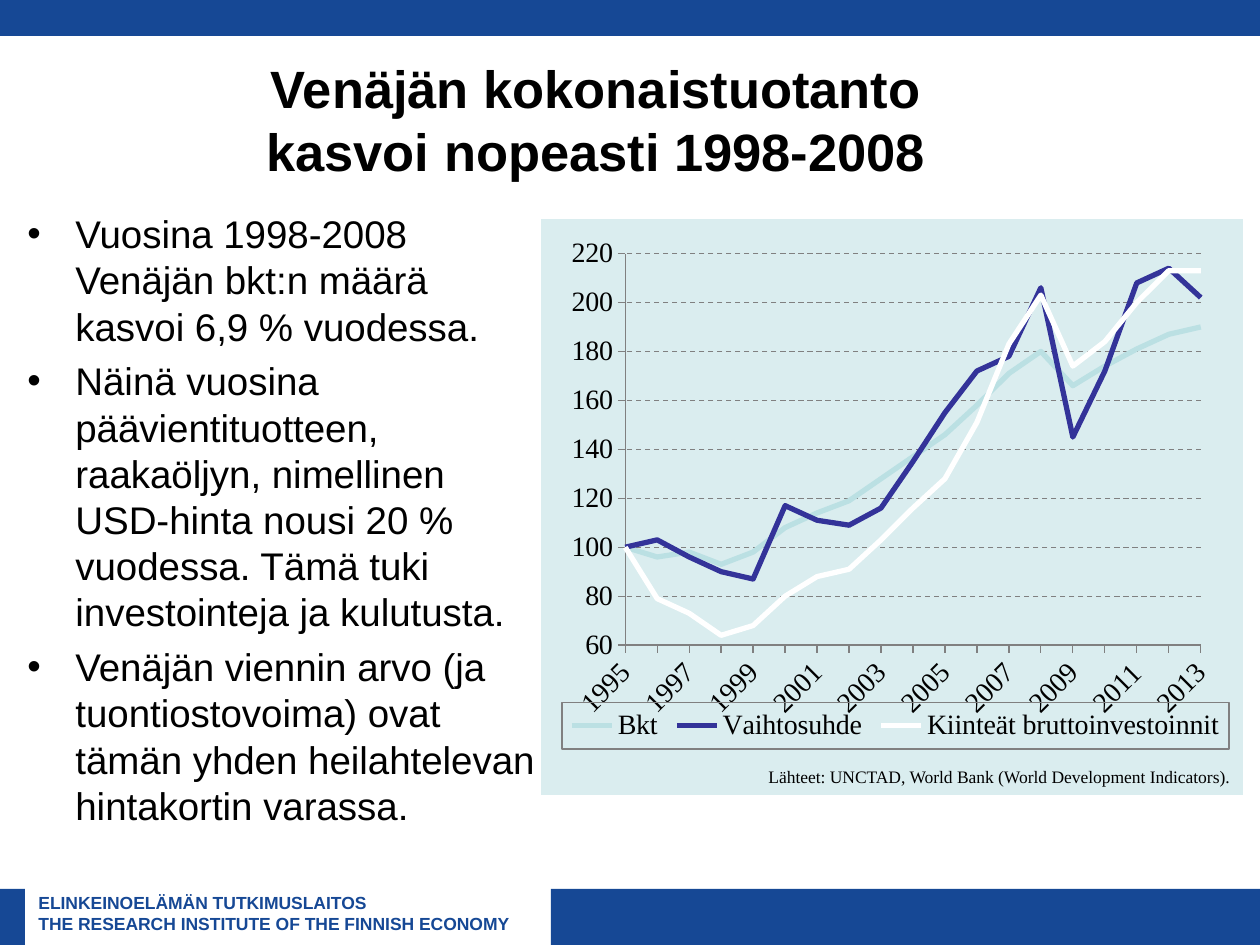
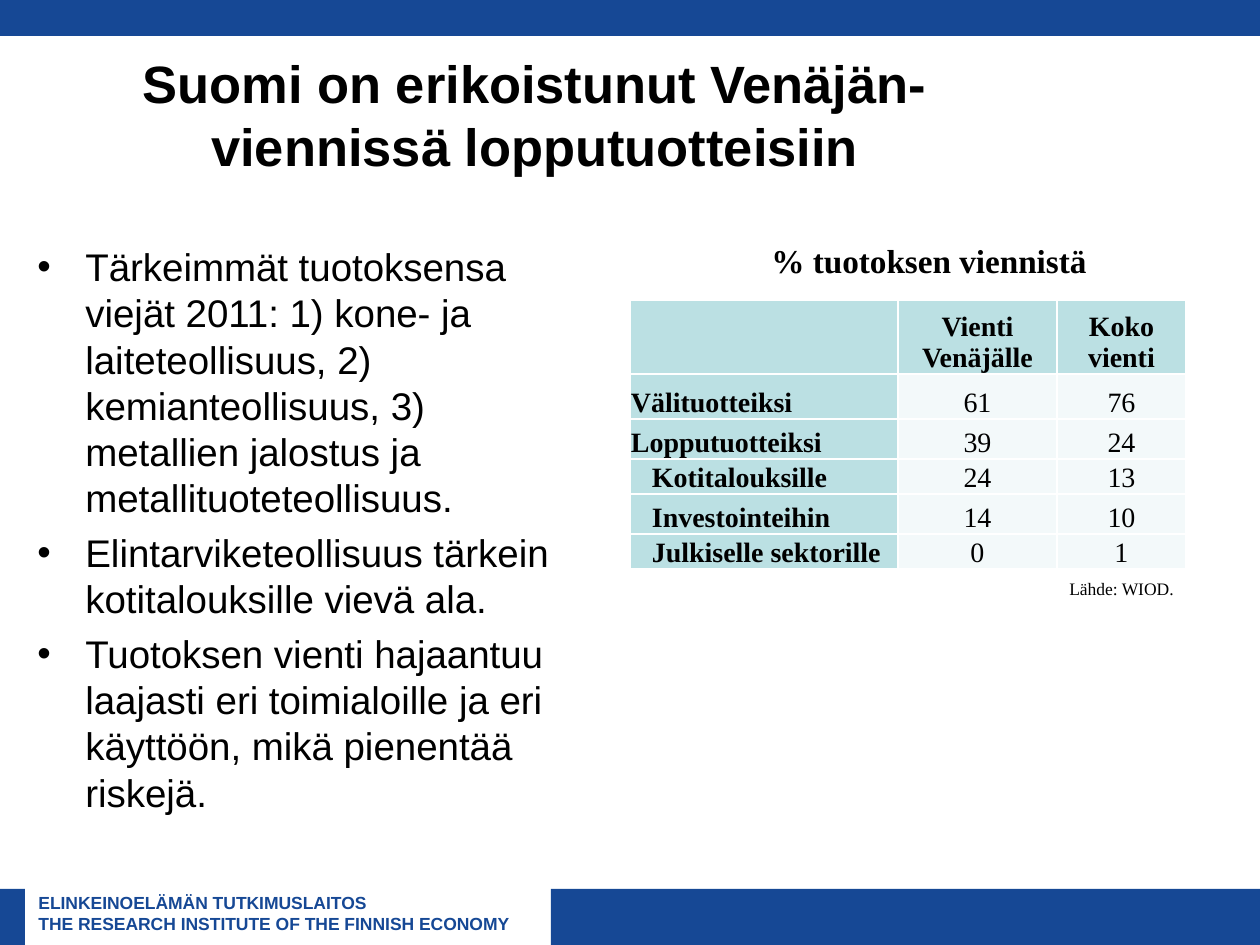
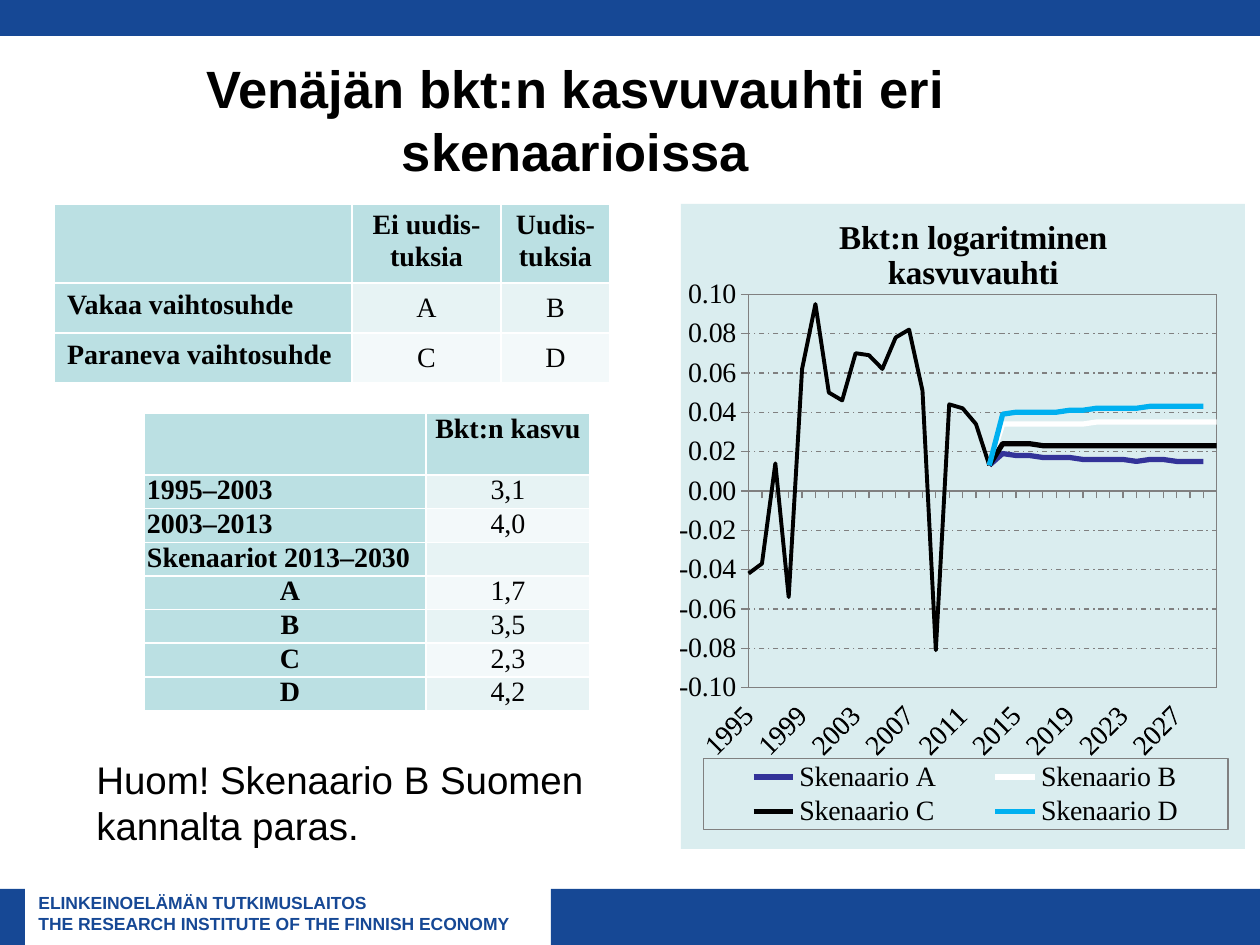
from lxml.etree import SubElement
from pptx import Presentation
from pptx.chart.data import CategoryChartData
from pptx.dml.color import RGBColor
from pptx.enum.chart import XL_CHART_TYPE, XL_LEGEND_POSITION, XL_TICK_LABEL_POSITION, XL_TICK_MARK
from pptx.enum.dml import MSO_LINE
from pptx.enum.shapes import MSO_SHAPE
from pptx.enum.text import MSO_ANCHOR, PP_ALIGN
from pptx.oxml import parse_xml
from pptx.oxml.ns import nsdecls, qn
from pptx.util import Emu, Pt

PX = 914400 / 126
SANS, SERIF = "Arial", "Times New Roman"
BLUE, BLACK, WHITE, GREY = "164895", "000000", "FFFFFF", "808080"
TEAL, PALE, NAVY, SKY = "BBE0E3", "DAEDEF", "333399", "00B0F0"
BAND, LIGHT = "E7F3F4", "F3F9FA"
LEFT, MID = PP_ALIGN.LEFT, PP_ALIGN.CENTER
TOP, CENTRE, BOTTOM = MSO_ANCHOR.TOP, MSO_ANCHOR.MIDDLE, MSO_ANCHOR.BOTTOM

BARS = [(551, 889, 709, 56), (0, 0, 1260, 36), (0, 889, 25, 56)]
FOOTER = ["ELINKEINOELÄMÄN TUTKIMUSLAITOS",
          "THE RESEARCH INSTITUTE OF THE FINNISH ECONOMY"]

GROWTH = [
    "Vuosina 1998-2008 Venäjän bkt:n määrä kasvoi 6,9 % vuodessa.",
    "Näinä vuosina päävientituotteen, raakaöljyn, nimellinen USD-hinta nousi 20 % vuodessa. "
    "Tämä tuki investointeja ja kulutusta.",
    "Venäjän viennin arvo (ja tuontiostovoima) ovat tämän yhden heilahtelevan "
    "hintakortin varassa.",
]
EXPORTS = [
    "Tärkeimmät tuotoksensa viejät 2011: 1) kone- ja laiteteollisuus, 2) kemianteollisuus, "
    "3) metallien jalostus ja metallituoteteollisuus.",
    "Elintarviketeollisuus tärkein kotitalouksille vievä ala.",
    "Tuotoksen vienti hajaantuu laajasti eri toimialoille ja eri käyttöön, "
    "mikä pienentää riskejä.",
]

OUTPUT = {
    "box": (541, 219, 702, 576), "years": range(1995, 2014), "skip": 2,
    "scale": (60, 220, 20), "format": "0",
    "plot": (0.12, 0.06, 0.82, 0.68), "legend": (0.03, 0.84, 0.95, 0.08),
    "frame": PALE, "dash": MSO_LINE.DASH,
    "series": [
        ("Bkt", TEAL, 3, [100, 96, 98, 93, 98, 108, 114, 119, 128, 137, 146, 158, 171, 180,
                          166, 174, 181, 187, 190]),
        ("Vaihtosuhde", NAVY, 3, [100, 103, 96, 90, 87, 117, 111, 109, 116, 135, 155, 172,
                                  178, 206, 145, 172, 208, 214, 202]),
        ("Kiinteät bruttoinvestoinnit", WHITE, 3,
         [100, 79, 73, 64, 68, 80, 88, 91, 103, 116, 128, 151, 183, 203, 174, 184, 200,
          213, 213]),
    ],
}
PAST = [-0.042, -0.037, 0.014, -0.054, 0.062, 0.095, 0.05, 0.046, 0.07, 0.069, 0.062, 0.078,
        0.082, 0.051, -0.081, 0.044, 0.042, 0.034, 0.013]
GAP = [None] * (len(PAST) - 1)
PATHS = [
    ("Skenaario A", NAVY, [0.019, 0.018, 0.018] + [0.017] * 3 + [0.016] * 4
     + [0.015, 0.016, 0.016] + [0.015] * 3),
    ("Skenaario B", WHITE, [0.034] * 7 + [0.035] * 10),
    ("Skenaario C", BLACK, [0.024] * 3 + [0.023] * 14),
    ("Skenaario D", SKY, [0.039] + [0.04] * 4 + [0.041] * 2 + [0.042] * 4 + [0.043] * 5),
]
FUTURE = {
    "box": (679, 204, 566, 645), "years": range(1995, 2031), "skip": 4,
    "scale": (-0.1, 0.1, 0.02), "format": "0.00",
    "plot": (0.12, 0.14, 0.83, 0.61), "legend": (0.04, 0.86, 0.93, 0.11),
    "frame": GREY, "dash": MSO_LINE.DASH_DOT, "hide": 0,
    "title": "Bkt:n logaritminen kasvuvauhti",
    "series": [("Series 1", BLACK, 2.25, PAST)]
    + [(name, color, 3, GAP + PAST[-1:] + vals[:17]) for name, color, vals in PATHS],
}

# "sub": first indented row, indent in px, alignment
SHARES = {
    "at": (630, 300), "cols": [268, 159, 129], "rows": [74, 45, 40, 35, 40, 35],
    "pad": (1, 1, 1, 0), "anchors": (BOTTOM, BOTTOM), "fills": (LIGHT, LIGHT),
    "sub": (3, 21, LEFT),
    "cells": [("", "Vienti Venäjälle", "Koko vienti"), ("Välituotteiksi", "61", "76"),
              ("Lopputuotteiksi", "39", "24"), ("Kotitalouksille", "24", "13"),
              ("Investointeihin", "14", "10"), ("Julkiselle sektorille", "0", "1")],
}
CHOICES = {
    "at": (54, 204), "cols": [298, 149, 109], "rows": [78, 50, 50],
    "pad": (13, 6, 13, 6), "anchors": (TOP, CENTRE), "fills": (BAND, LIGHT),
    "sub": (3, 0, LEFT),
    "cells": [("", "Ei uudis-tuksia", "Uudis-tuksia"), ("Vakaa vaihtosuhde", "A", "B"),
              ("Paraneva vaihtosuhde", "C", "D")],
}
RATES = {
    "at": (144, 413), "cols": [282, 164], "rows": [62] + [31] * 7,
    "pad": (3, 0, 3, 0), "anchors": (TOP, TOP), "fills": (BAND, LIGHT),
    "sub": (4, 10, MID),
    "cells": [("", "Bkt:n kasvu"), ("1995–2003", "3,1"), ("2003–2013", "4,0"),
              ("Skenaariot 2013–2030", ""), ("A", "1,7"), ("B", "3,5"), ("C", "2,3"),
              ("D", "4,2")],
}


def px(n):
    return Emu(round(n * PX))


def rgb(code):
    return RGBColor.from_string(code)


def style(font, size, color=BLACK, bold=False, face=SERIF):
    font.name, font.size, font.bold = face, Pt(size), bold
    font.color.rgb = rgb(color)


def text(slide, box, lines, size, color=BLACK, bold=False, face=SANS,
         align=LEFT, anchor=TOP, bullet=False):
    frame = slide.shapes.add_textbox(*map(px, box)).text_frame
    frame.word_wrap, frame.vertical_anchor = True, anchor
    frame.text = "\n".join(lines)
    for i, par in enumerate(frame.paragraphs):
        par.alignment = align
        if face == SANS:
            par.line_spacing = Pt(size * 1.2)
        if bullet:
            par.space_before = Pt(5 if i else 0)
            props = par._p.get_or_add_pPr()
            props.set("marL", str(px(48)))
            props.set("indent", str(-px(48)))
            SubElement(props, qn("a:buFont"), typeface=SANS)
            SubElement(props, qn("a:buChar"), char="•")
        for run in par.runs:
            style(run.font, size, color, bold, face)


def start(deck, box, title):
    """Add a slide with the shared bands, footer and title."""
    slide = deck.slides.add_slide(deck.slide_layouts[6])
    for bar in BARS:
        shape = slide.shapes.add_shape(MSO_SHAPE.RECTANGLE, *map(px, bar))
        shape.shadow.inherit = False
        shape.fill.solid()
        shape.fill.fore_color.rgb = rgb(BLUE)
        shape.line.fill.background()
    text(slide, (26, 886, 525, 54), FOOTER, 10, BLUE, True)
    text(slide, box, [title], 30, bold=True, align=MID, anchor=CENTRE)
    return slide


def table(slide, spec):
    cols, rows = spec["cols"], spec["rows"]
    box = (*spec["at"], sum(cols), sum(rows))
    grid = slide.shapes.add_table(len(rows), len(cols), *map(px, box)).table
    for col, width in zip(grid.columns, cols):
        col.width = px(width)
    for row, height in zip(grid.rows, rows):
        row.height = px(height)
    first, indent, side = spec["sub"]
    for r, line in enumerate(spec["cells"]):
        for c, word in enumerate(line):
            cell, head = grid.cell(r, c), r == 0 or c == 0
            cell.fill.solid()
            cell.fill.fore_color.rgb = rgb(TEAL if head else spec["fills"][(r - 1) % 2])
            (cell.margin_left, cell.margin_top,
             cell.margin_right, cell.margin_bottom) = map(px, spec["pad"])
            cell.vertical_anchor = spec["anchors"][0 if head else 1]
            cell.text = word
            par = cell.text_frame.paragraphs[0]
            par.alignment = MID if r == 0 or c else LEFT
            if c == 0 and r >= first:
                par.alignment = side
                par._p.get_or_add_pPr().set("marL", str(px(indent)))
            for run in par.runs:
                style(run.font, 16, bold=head)
            if not word:
                SubElement(par._p, qn("a:endParaRPr"), sz="1600")


def place(node, index, spots, inner=False):
    """Give a chart part a fixed place, as shares of the chart."""
    old = node.find(qn("c:layout"))
    if old is not None:
        node.remove(old)
    layout = parse_xml(f"<c:layout {nsdecls('c')}><c:manualLayout/></c:layout>")
    if inner:
        SubElement(layout[0], qn("c:layoutTarget"), val="inner")
    for key in ("xMode", "yMode"):
        SubElement(layout[0], qn("c:" + key), val="edge")
    for key, spot in zip("xywh", spots):
        SubElement(layout[0], qn("c:" + key), val=str(spot))
    node.insert(index, layout)


def paint(fill=None, line=None):
    body = f'<a:solidFill><a:srgbClr val="{fill}"/></a:solidFill>' if fill else "<a:noFill/>"
    edge = f'<a:solidFill><a:srgbClr val="{line}"/></a:solidFill>' if line else "<a:noFill/>"
    return parse_xml(f'<c:spPr {nsdecls("c", "a")}>{body}<a:ln w="9525">{edge}</a:ln></c:spPr>')


def chart(slide, spec):
    data = CategoryChartData()
    data.categories = [str(year) for year in spec["years"]]
    for name, _, _, vals in spec["series"]:
        data.add_series(name, vals)
    graph = slide.shapes.add_chart(XL_CHART_TYPE.LINE, *map(px, spec["box"]), data).chart
    style(graph.font, 16)
    root = graph.element.find(qn("c:chart"))
    root.addnext(paint(PALE))
    area = root.find(qn("c:plotArea"))
    place(area, 0, spec["plot"], True)
    area.append(paint(line=spec["frame"]))

    graph.plots[0].vary_by_categories = False
    for line, (_, color, width, _) in zip(graph.plots[0].series, spec["series"]):
        line.smooth = False
        line.format.line.width = Pt(width)
        line.format.line.color.rgb = rgb(color)

    cats, vals = graph.category_axis, graph.value_axis
    for axis in (cats, vals):
        axis.major_tick_mark = XL_TICK_MARK.OUTSIDE
        axis.format.line.color.rgb = rgb(GREY)
        style(axis.tick_labels.font, 16)
    cats.tick_label_position = XL_TICK_LABEL_POSITION.LOW
    node = cats._element
    node.find(qn("c:txPr")).find(qn("a:bodyPr")).set("rot", "-2700000")
    last = node.find(qn("c:noMultiLvlLbl"))
    for key, step in (("tickLblSkip", spec["skip"]), ("tickMarkSkip", 1)):
        last.addprevious(parse_xml(f'<c:{key} {nsdecls("c")} val="{step}"/>'))
    vals.minimum_scale, vals.maximum_scale, vals.major_unit = spec["scale"]
    vals.tick_labels.number_format = spec["format"]
    vals.tick_labels.number_format_is_linked = False
    rule = vals.major_gridlines.format.line
    rule.color.rgb, rule.width, rule.dash_style = rgb(GREY), Pt(0.75), spec["dash"]
    cross = vals._element.find(qn("c:crossBetween"))
    if cross is None:
        cross = parse_xml(f'<c:crossBetween {nsdecls("c")}/>')
        vals._element.find(qn("c:majorUnit")).addprevious(cross)
    cross.set("val", "midCat")

    graph.has_legend = True
    legend = graph.legend
    legend.position, legend.include_in_layout = XL_LEGEND_POSITION.BOTTOM, False
    style(legend.font, 16)
    node = legend._element
    place(node, 1, spec["legend"])
    node.find(qn("c:txPr")).addprevious(paint(line=GREY))
    if "hide" in spec:
        node.insert(1, parse_xml(
            f'<c:legendEntry {nsdecls("c")}><c:idx val="{spec["hide"]}"/>'
            '<c:delete val="1"/></c:legendEntry>'))

    graph.has_title = "title" in spec
    if graph.has_title:
        frame = graph.chart_title.text_frame
        frame.text = spec["title"]
        style(frame.paragraphs[0].runs[0].font, 19, bold=True)
        place(graph.chart_title._element, 1, (0.27, 0.01))


def main():
    deck = Presentation()
    deck.slide_width, deck.slide_height = px(1260), px(945)

    slide = start(deck, (184, 55, 824, 129),
                  "Venäjän kokonaistuotanto kasvoi nopeasti 1998-2008")
    text(slide, (15, 204, 536, 684), GROWTH, 22, bullet=True)
    chart(slide, OUTPUT)
    text(slide, (756, 760, 499, 34),
         ["Lähteet: UNCTAD, World Bank (World Development Indicators)."], 10, face=SERIF)

    slide = start(deck, (64, 45, 942, 139),
                  "Suomi on erikoistunut Venäjän-viennissä lopputuotteisiin")
    table(slide, SHARES)
    text(slide, (1057, 572, 137, 34), ["Lähde: WIOD."], 10, face=SERIF)
    text(slide, (25, 237, 566, 590), EXPORTS, 22, bullet=True)
    text(slide, (759, 234, 345, 53), ["% tuotoksen viennistä"], 19, bold=True, face=SERIF)

    slide = start(deck, (144, 55, 863, 129), "Venäjän bkt:n kasvuvauhti eri skenaarioissa")
    chart(slide, FUTURE)
    table(slide, CHOICES)
    table(slide, RATES)
    text(slide, (84, 750, 529, 106), ["Huom! Skenaario B Suomen", "kannalta paras."], 22)

    deck.save("out.pptx")


if __name__ == "__main__":
    main()
